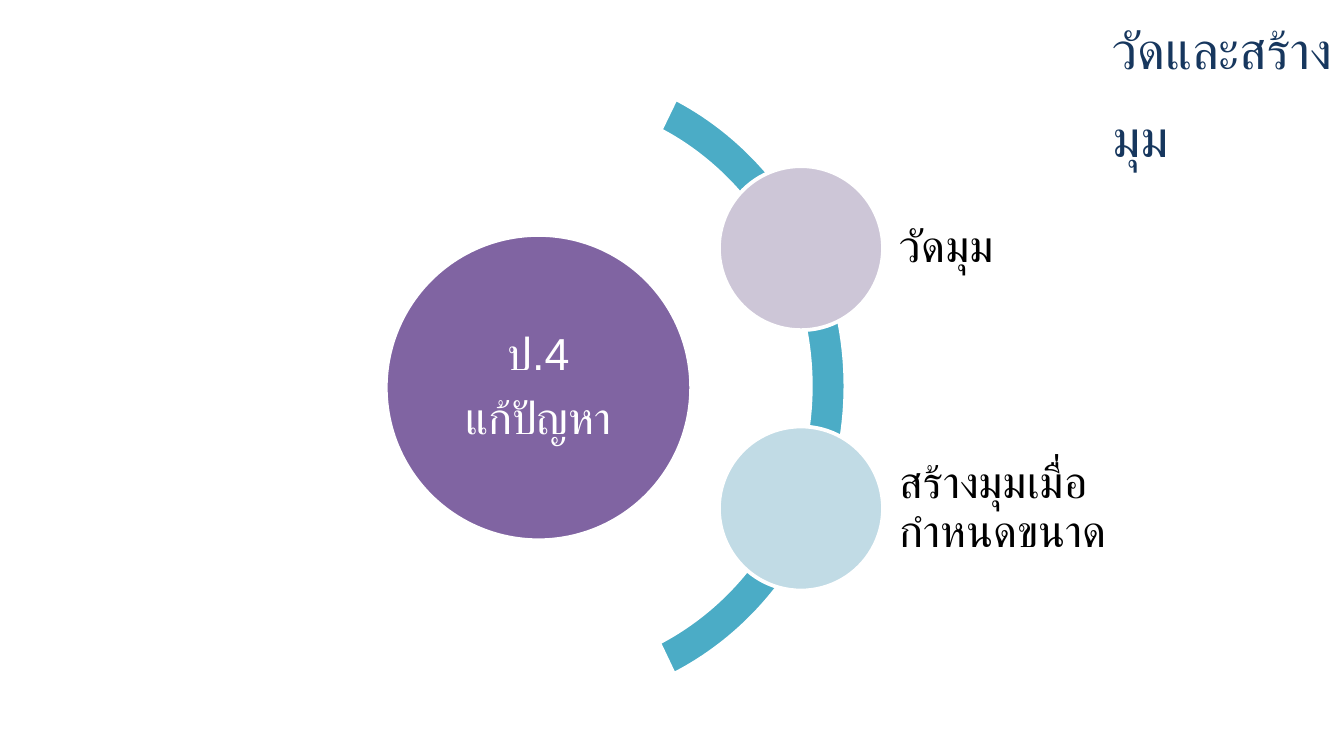
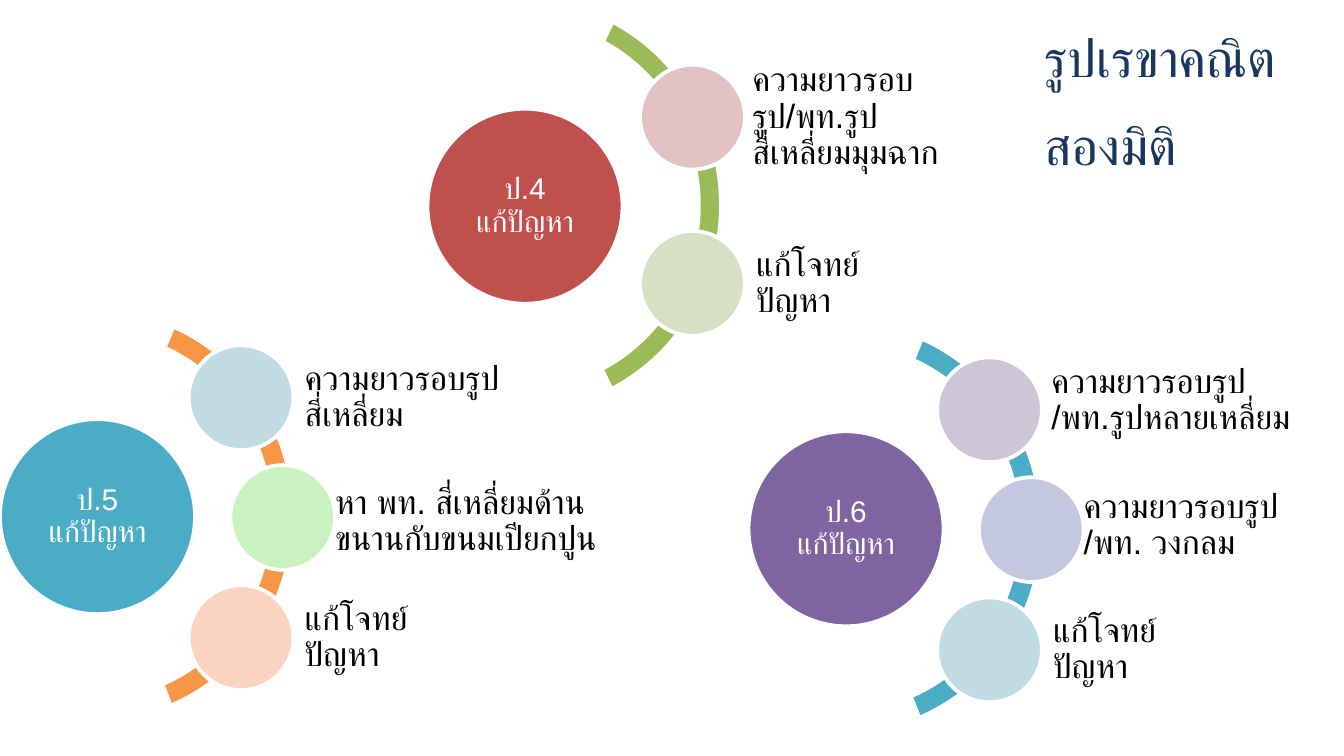
from dataclasses import dataclass

from lxml.etree import SubElement
from pptx import Presentation
from pptx.dml.color import RGBColor
from pptx.enum.lang import MSO_LANGUAGE_ID as Lang
from pptx.enum.shapes import MSO_SHAPE as Preset
from pptx.enum.text import MSO_ANCHOR as Anchor, MSO_AUTO_SIZE as AutoSize, PP_ALIGN as Align
from pptx.oxml.ns import qn
from pptx.util import Pt


@dataclass(frozen=True)
class Theme:
    font: str = "Arial"
    navy: str = "17375E"
    white: str = "FFFFFF"
    black: str = "000000"
    purple: str = "8064A2"
    teal: str = "4BACC6"
    red: str = "C0504D"
    green: str = "9BBB59"
    orange: str = "F79646"
    pale_purple: str = "CDC6D7"
    pale_teal: str = "C1DBE5"
    pale_mint: str = "CAF1C0"
    pale_peach: str = "FBD3C1"
    pale_blue: str = "C3C8DE"
    pale_red: str = "E2C2C2"
    pale_green: str = "D5E0C4"
    title_size: int = 28
    large_size: int = 24
    label_size: int = 18
    hub_size: int = 16
    outline: int = 2


@dataclass(frozen=True)
class Topic:
    text: str
    colour: str
    width: float
    gap: float = 4
    shift: float = 0


@dataclass(frozen=True)
class Ring:
    start: float
    end: float
    thickness: float
    spots: tuple


THEME = Theme()
TWO_TOPICS = Ring(295.8, 64.55, 0.056, ((0.795, 0.158), (0.795, 0.563)))
THREE_TOPICS = Ring(292.13, 68.65, 0.058, ((0.734, 0.085), (0.84, 0.377), (0.734, 0.67)))
ARC_RATIO = 1.042
HUB_LEFT, HUB_TOP, HUB_SHARE = 0.255, 0.265, 0.495
HUB_TEXT_SHARE = 0.707
NODE_SHARE = 0.266
LABEL_SHARE = 0.965


def add_text(shapes, box, paragraphs, *, size, colour, align=Align.LEFT,
             anchor=Anchor.MIDDLE, spacing=0.9, after=0, inset=2, grow=False):
    text_box = shapes.add_textbox(*map(Pt, box))
    frame = text_box.text_frame
    frame.word_wrap = True
    frame.auto_size = AutoSize.SHAPE_TO_FIT_TEXT if grow else AutoSize.NONE
    frame.vertical_anchor = anchor
    frame.margin_left = frame.margin_right = Pt(inset)
    frame.margin_top = frame.margin_bottom = Pt(inset)
    for index, text in enumerate(paragraphs):
        paragraph = frame.paragraphs[0] if index == 0 else frame.add_paragraph()
        paragraph.text = text
        paragraph.alignment = align
        paragraph.line_spacing = spacing
        paragraph.space_after = Pt(size * after)
        for run in paragraph.runs:
            run.font.size = Pt(size)
            run.font.name = THEME.font
            run.font.color.rgb = RGBColor.from_string(colour)
            run.font.language_id = Lang.THAI
            SubElement(run.font._element, qn("a:cs"), typeface=THEME.font)


def add_filled(shapes, preset, box, colour):
    shape = shapes.add_shape(preset, *map(Pt, box))
    shape.shadow.inherit = False
    shape.fill.solid()
    shape.fill.fore_color.rgb = RGBColor.from_string(colour)
    shape.line.color.rgb = RGBColor.from_string(THEME.white)
    shape.line.width = Pt(THEME.outline)
    return shape


def add_title(slide, box, text):
    add_text(slide.shapes, box, [text], size=THEME.title_size, colour=THEME.navy,
             anchor=Anchor.TOP, spacing=1.4, inset=0, grow=True)


def add_radial(slide, left, top, width, ring, *, hub, hub_colour, arc_colour,
               topics, hub_size=THEME.hub_size, label_size=THEME.label_size):
    shapes = slide.shapes.add_group_shape().shapes
    height = width * ARC_RATIO

    hub_left, hub_top = left + HUB_LEFT * width, top + HUB_TOP * height
    hub_width = HUB_SHARE * width
    add_filled(shapes, Preset.OVAL, (hub_left, hub_top, hub_width, hub_width), hub_colour)
    text_width = hub_width * HUB_TEXT_SHARE
    margin = (hub_width - text_width) / 2
    add_text(shapes, (hub_left + margin, hub_top + margin, text_width, text_width), hub,
             size=hub_size, colour=THEME.white, align=Align.CENTER, after=0.35)

    arc = add_filled(shapes, Preset.BLOCK_ARC, (left, top, width, height), arc_colour)
    arc.adjustments[0] = ring.start * 0.6
    arc.adjustments[1] = ring.end * 0.6
    arc.adjustments[2] = ring.thickness

    node = NODE_SHARE * width
    label_height = node * LABEL_SHARE
    for topic, (across, down) in zip(topics, ring.spots):
        node_left, node_top = left + across * width, top + down * height
        add_filled(shapes, Preset.OVAL, (node_left, node_top, node, node), topic.colour)
        label_top = node_top + (node - label_height) / 2 + topic.shift
        add_text(shapes, (node_left + node + topic.gap, label_top, topic.width, label_height),
                 [topic.text], size=label_size, colour=THEME.black, after=0.1)


def build_angles(slide):
    add_title(slide, (596, -4, 124, 47.5), "วัดและสร้างมุม")
    add_radial(slide, 122.4, 34.6, 330.5, TWO_TOPICS,
               hub=["ป.4", "แก้ปัญหา"], hub_colour=THEME.purple, arc_colour=THEME.teal,
               hub_size=THEME.large_size, label_size=THEME.large_size,
               topics=[Topic("วัดมุม", THEME.pale_purple, 117.5, 7),
                       Topic("สร้างมุมเมื่อกำหนดขนาด", THEME.pale_teal, 117.5, 7)])


def build_plane_figures(slide):
    problem = "แก้โจทย์ปัญหา"
    add_title(slide, (559.5, 0, 160.5, 47.5), "รูปเรขาคณิตสองมิติ")
    add_radial(slide, -53.8, 166.3, 211, THREE_TOPICS,
               hub=["ป.5\nแก้ปัญหา"], hub_colour=THEME.teal, arc_colour=THEME.orange,
               topics=[Topic("ความยาวรอบรูปสี่เหลี่ยม", THEME.pale_teal, 137),
                       Topic("หา พท. สี่เหลี่ยมด้านขนานกับขนมเปียกปูน",
                             THEME.pale_mint, 144.5, -2, 2),
                       Topic(problem, THEME.pale_peach, 75)])
    add_radial(slide, 347.2, 172.8, 211, THREE_TOPICS,
               hub=["ป.6\nแก้ปัญหา"], hub_colour=THEME.purple, arc_colour=THEME.teal,
               topics=[Topic("ความยาวรอบรูป\n/พท.รูปหลายเหลี่ยม",
                             THEME.pale_purple, 143.5, 3, -5),
                       Topic("ความยาวรอบรูป\n/พท. วงกลม", THEME.pale_blue, 124, -2, -2),
                       Topic(problem, THEME.pale_teal, 75)])
    add_radial(slide, 175.2, 0, 211, TWO_TOPICS,
               hub=["ป.4\nแก้ปัญหา"], hub_colour=THEME.red, arc_colour=THEME.green,
               topics=[Topic("ความยาวรอบรูป/พท.รูปสี่เหลี่ยมมุมฉาก",
                             THEME.pale_red, 114, 2),
                       Topic(problem, THEME.pale_green, 75)])


def main():
    deck = Presentation()
    deck.slide_width, deck.slide_height = Pt(720), Pt(405)
    for build in (build_angles, build_plane_figures):
        build(deck.slides.add_slide(deck.slide_layouts[6]))
    deck.save("out.pptx")


if __name__ == "__main__":
    main()
